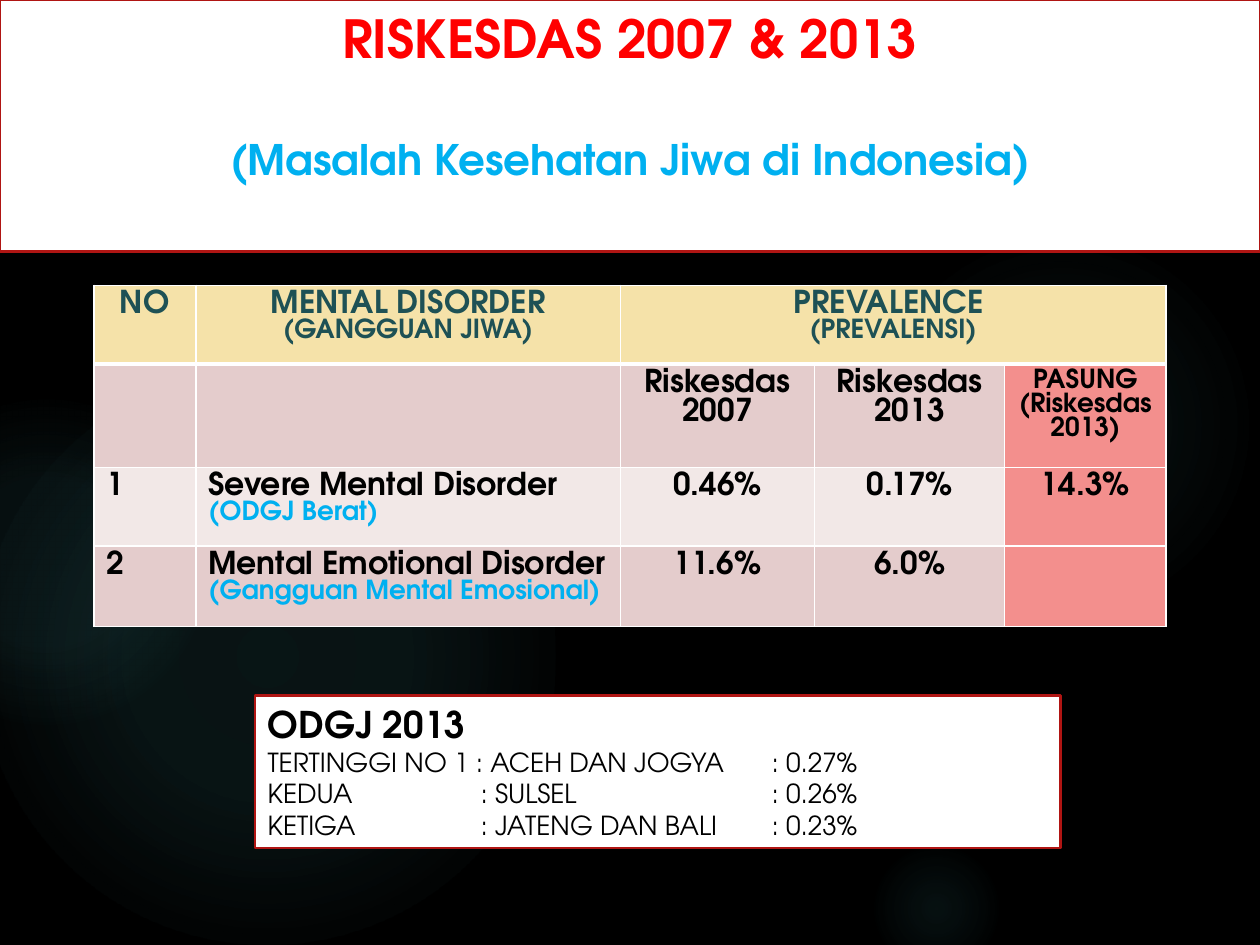
from dataclasses import dataclass

from lxml.etree import SubElement
from pptx import Presentation
from pptx.dml.color import RGBColor
from pptx.enum.shapes import MSO_SHAPE as Shape
from pptx.enum.text import MSO_ANCHOR as Anchor, PP_ALIGN as Align
from pptx.oxml.ns import qn
from pptx.util import Inches, Pt


@dataclass(frozen=True)
class Theme:
    font: str = "TeX Gyre Adventor"
    black: str = "000000"
    white: str = "FFFFFF"
    red: str = "FF0000"
    frame: str = "B01513"
    blue: str = "00B0F0"
    teal: str = "1E5155"
    glow: str = "50B9C1"
    header: str = "F5E2A9"
    band_dark: str = "E4CCCC"
    band_light: str = "F2E8E7"
    accent: str = "F38F8D"
    title: int = 30
    subtitle: int = 24
    note_head: int = 21
    body: int = 18
    small: int = 15


T = Theme()


def grid(*units):
    """Lengths on a grid of 100 columns by 75 rows."""
    return [Inches(u / 10) for u in units]


def rgb(color):
    return RGBColor.from_string(color)


def style(font, size, color, bold=True):
    font.name, font.size, font.bold = T.font, Pt(size), bold
    font.color.rgb = rgb(color)


def add_paragraph(tf, index, text, size, color, bold=True, align=Align.LEFT):
    p = tf.add_paragraph() if index else tf.paragraphs[0]
    p.text, p.alignment = text, align
    style(p.font, size, color, bold)
    return p


def add_glow(slide, left, top, size, stops):
    """Soft round light; stops are (position %, opacity %)."""
    s = slide.shapes.add_shape(Shape.OVAL, *grid(left, top, size, size))
    s.shadow.inherit = False
    s.line.fill.background()
    s.fill.gradient()
    grad = s.fill._xPr.find(qn("a:gradFill"))
    for child in list(grad):
        grad.remove(child)
    gs_list = SubElement(grad, qn("a:gsLst"))
    for pos, opacity in stops:
        gs = SubElement(gs_list, qn("a:gs"), pos=str(pos * 1000))
        color = SubElement(gs, qn("a:srgbClr"), val=T.glow)
        SubElement(color, qn("a:alpha"), val=str(opacity * 1000))
    circle = SubElement(grad, qn("a:path"), path="circle")
    SubElement(circle, qn("a:fillToRect"), l="50000", t="50000", r="50000", b="50000")


def add_panel(slide, *place):
    s = slide.shapes.add_shape(Shape.RECTANGLE, *grid(*place))
    s.shadow.inherit = False
    s.fill.solid()
    s.fill.fore_color.rgb = rgb(T.white)
    s.line.color.rgb = rgb(T.frame)
    s.line.width = Pt(1.5)
    s.text_frame.word_wrap = True
    s.text_frame.vertical_anchor = Anchor.TOP
    return s.text_frame


def add_title(slide):
    tf = add_panel(slide, 0, 0, 100, 19.95)
    add_paragraph(tf, 0, "RISKESDAS 2007 & 2013", T.title, T.red, align=Align.CENTER)
    p = add_paragraph(tf, 1, "(Masalah Kesehatan Jiwa di Indonesia)",
                      T.subtitle, T.blue, align=Align.CENTER)
    p.space_before = Pt(36.5)


def set_borders(cell, bottom):
    tc_pr = cell._tc.get_or_add_tcPr()
    for side, width in (("L", 1), ("R", 1), ("T", 1), ("B", bottom)):
        ln = SubElement(tc_pr, qn(f"a:ln{side}"), w=str(Pt(width)))
        SubElement(SubElement(ln, qn("a:solidFill")), qn("a:srgbClr"), val=T.white)


def fill_cell(cell, paragraphs, fill, align, bottom=1):
    """Each paragraph is a list of (text, size, color) runs."""
    set_borders(cell, bottom)
    cell.fill.solid()
    cell.fill.fore_color.rgb = rgb(fill)
    cell.margin_top = cell.margin_bottom = Inches(0.04)
    tf = cell.text_frame
    for i, runs in enumerate(paragraphs):
        p = tf.add_paragraph() if i else tf.paragraphs[0]
        p.alignment = align
        for text, size, color in runs:
            r = p.add_run()
            r.text = text
            style(r.font, size, color)


def add_prevalence_table(slide):
    def big(text, color=T.black):
        return (text, T.body, color)

    def small(text, color=T.black):
        return (text, T.small, color)

    def disorder(number, name, local_name, *values):
        return [[[big(number)]], [[big(name + " "), small(local_name, T.blue)]],
                *([[big(v)]] if v else [] for v in values)]

    rows = [
        [[[big("NO", T.teal)]],
         [[big("MENTAL DISORDER ", T.teal), small("(GANGGUAN JIWA)", T.teal)]],
         [[big("PREVALENCE ", T.teal)], [small("(PREVALENSI)", T.teal)]], [], []],
        [[], [], [[big("Riskesdas 2007")]], [[big("Riskesdas 2013")]],
         [[small("PASUNG")], [small("(Riskesdas 2013)")]]],
        disorder("1", "Severe Mental Disorder", "(ODGJ Berat)", "0.46%", "0.17%", "14.3%"),
        disorder("2", "Mental Emotional Disorder", "(Gangguan Mental Emosional)",
                 "11.6%", "6.0%", ""),
    ]
    widths, heights = (8.1, 33.7, 15.4, 15.1, 12.8), (6.25, 8.2, 6.25, 6.4)
    bands = (T.header, T.band_dark, T.band_light, T.band_dark)
    table = slide.shapes.add_table(
        len(rows), len(widths), *grid(7.45, 22.65, sum(widths), sum(heights))).table
    for column, width in zip(table.columns, grid(*widths)):
        column.width = width
    for row, height in zip(table.rows, grid(*heights)):
        row.height = height
    table.cell(0, 2).merge(table.cell(0, 4))
    for i, (row, band) in enumerate(zip(rows, bands)):
        for j, content in enumerate(row):
            fill = T.accent if i and j == 4 else band
            align = Align.LEFT if i > 1 and j < 2 else Align.CENTER
            fill_cell(table.cell(i, j), content, fill, align, bottom=1 if i else 3)


def add_ranking(slide):
    tf = add_panel(slide, 20.25, 55.2, 63.9, 12.1)
    add_paragraph(tf, 0, "ODGJ 2013", T.note_head, T.black)
    lines = ("TERTINGGI NO 1 : ACEH DAN JOGYA\t: 0.27%",
             "KEDUA\t: SULSEL\t: 0.26%",
             "KETIGA\t: JATENG DAN BALI\t: 0.23%")
    for i, line in enumerate(lines, 1):
        p = add_paragraph(tf, i, line, T.small, T.black, bold=False)
        p_pr = p._p.get_or_add_pPr()
        tabs = p_pr.makeelement(qn("a:tabLst"), {})
        p_pr.find(qn("a:defRPr")).addprevious(tabs)
        for stop in grid(16.9, 40):
            SubElement(tabs, qn("a:tab"), pos=str(stop), algn="l")


def main():
    prs = Presentation()
    prs.slide_width, prs.slide_height = grid(100, 75)
    slide = prs.slides.add_slide(prs.slide_layouts[6])
    slide.background.fill.solid()
    slide.background.fill.fore_color.rgb = rgb(T.black)
    add_glow(slide, 68.9, 18.3, 30.8, ((0, 7), (36, 6), (69, 0)))
    add_glow(slide, 68.9, 66.7, 10.8, ((0, 9), (36, 5), (66, 0)))
    add_glow(slide, -1.7, 29.2, 45.8, ((0, 11), (36, 10), (75, 0)))
    add_glow(slide, -9.2, 31.7, 25.8, ((0, 8), (36, 8), (72, 0)))
    add_title(slide)
    add_prevalence_table(slide)
    add_ranking(slide)
    prs.save("out.pptx")


if __name__ == "__main__":
    main()
